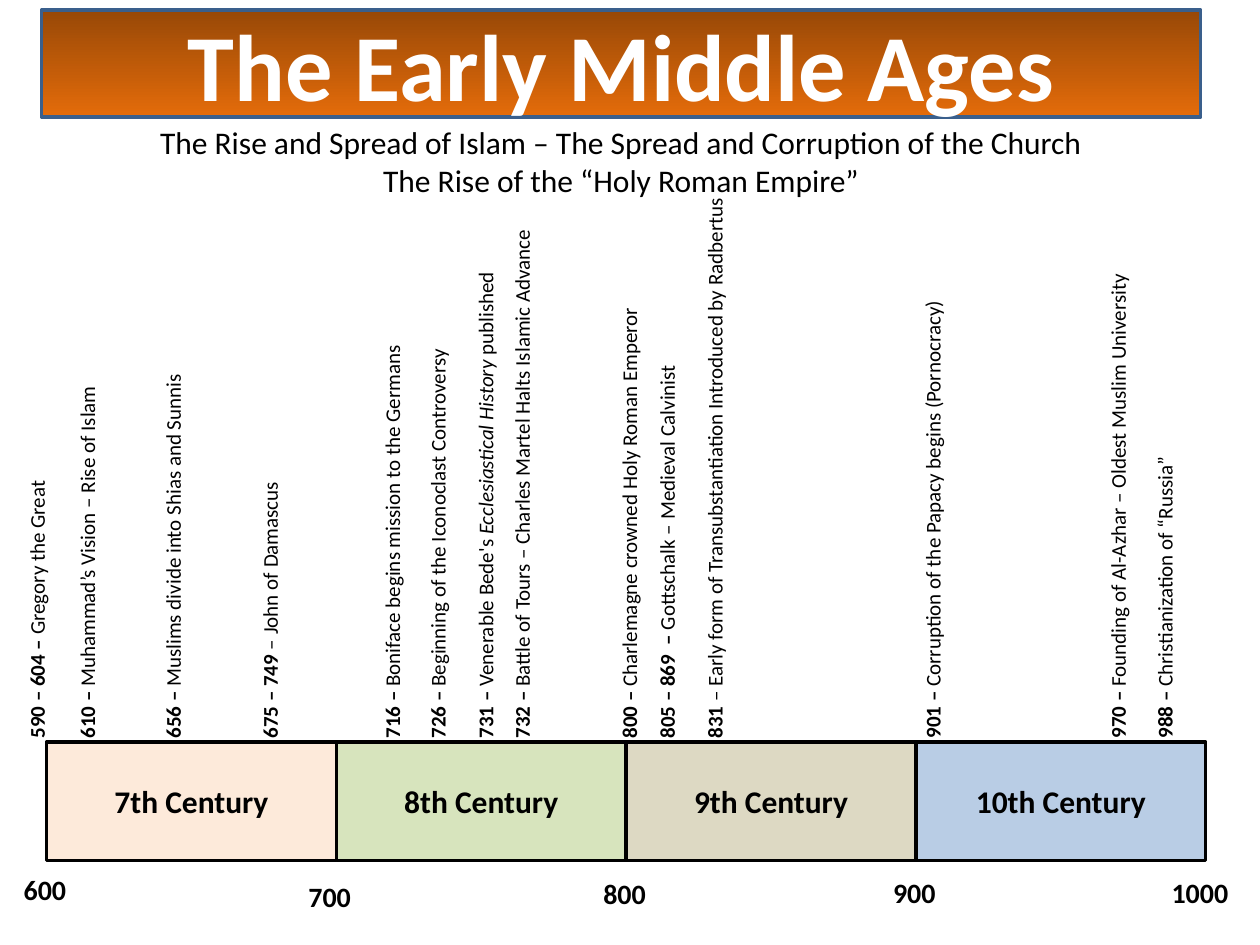
from pptx import Presentation
from pptx.dml.color import RGBColor
from pptx.enum.shapes import MSO_SHAPE
from pptx.enum.text import MSO_ANCHOR, MSO_AUTO_SIZE, PP_ALIGN
from pptx.util import Inches, Pt

RECTANGLE = MSO_SHAPE.RECTANGLE
MIDDLE, TOP = MSO_ANCHOR.MIDDLE, MSO_ANCHOR.TOP
GROW, FIXED = MSO_AUTO_SIZE.SHAPE_TO_FIT_TEXT, MSO_AUTO_SIZE.NONE
LEFT, CENTER = PP_ALIGN.LEFT, PP_ALIGN.CENTER

THEME = {
    "font": "Calibri",
    "text": "000000",
    "title_text": "FFFFFF",
    "title_gradient": ("984807", "E46C0A"),
    "title_line": "3A5F8C",
    "band_line": "000000",
    "line_width": 2,
    "title_size": 54,
    "heading_size": 18,
    "year_size": 16,
    "event_size": 12,
}

TITLE = "The Early Middle Ages"
SUBTITLE = (
    "The Rise and Spread of Islam – The Spread and Corruption of the Church",
    "The Rise of the “Holy Roman Empire”",
)
CENTURIES = (
    ("7th Century", "FDEADA"),
    ("8th Century", "D7E4BD"),
    ("9th Century", "DDD9C3"),
    ("10th Century", "B9CDE5"),
)
# year, left, top, width
YEARS = (
    ("600", 0.09, 6.88, 0.54),
    ("700", 2.35, 6.93, 0.54),
    ("800", 4.69, 6.91, 0.54),
    ("900", 6.99, 6.9, 0.54),
    ("1000", 9.2, 6.9, 0.65),
)
# centre on the timeline, length of the upright label, date, (text, italic) pieces
EVENTS = (
    (0.29, 2.44, "590 – 604 – ", [("Gregory the Great", False)]),
    (0.69, 3.08, "610 – ", [("Muhammad’s Vision – Rise of Islam", False)]),
    (1.37, 4.64, "656 – ", [("Muslims divide into Shias and Sunnis", False)]),
    (2.14, 2.29, "675 – 749", [(" – John of Damascus", False)]),
    (3.11, 3.41, "716 – ", [("Boniface begins mission to the Germans", False)]),
    (3.47, 3.31, "726 – ", [("Beginning of the Iconoclast Controversy", False)]),
    (3.85, 3.98, "731 – ", [("Venerable Bede's ", False),
                            ("Ecclesiastical History ", True),
                            ("published", False)]),
    (4.14, 4.27, "732 – ",
     [("Battle of Tours – Charles Martel Halts Islamic Advance", False)]),
    (4.99, 3.69, "800 – ", [("Charlemagne crowned Holy Roman Emperor", False)]),
    (5.29, 5.18, "805 – 869  – ", [("Gottschalk – Medieval Calvinist", False)]),
    (5.67, 4.51, "831 ",
     [("– Early form of Transubstantiation Introduced by Radbertus", False)]),
    (7.4, 3.77, "901 – ", [("Corruption of the Papacy begins (Pornocracy)", False)]),
    (8.87, 3.94, "970 – ", [("Founding of Al-Azhar – Oldest Muslim University", False)]),
    (9.24, 2.59, "988 – ", [("Christianization of “Russia”", False)]),
)

BAND_LEFT, BAND_TOP, BAND_WIDTH, BAND_HEIGHT = 0.37, 5.89, 2.3, 0.94
EVENT_BOTTOM, EVENT_THICKNESS, EVENT_INDENT = 5.96, 0.3, 0.43
HEADER_LEFT, HEADER_WIDTH = 0.33, 9.2


def rgb(color):
    return RGBColor.from_string(color)


def write(shape, paragraphs, size, color=THEME["text"], align=LEFT, **frame_format):
    """Fill a shape with paragraphs, each a list of (text, bold, italic) runs."""
    frame = shape.text_frame
    for name, value in frame_format.items():
        setattr(frame, name, value)
    for index, runs in enumerate(paragraphs):
        paragraph = frame.add_paragraph() if index else frame.paragraphs[0]
        paragraph.alignment = align
        for text, bold, italic in runs:
            run = paragraph.add_run()
            run.text = text
            run.font.color.rgb = rgb(color)
            values = {"name": THEME["font"], "size": Pt(size),
                      "bold": bold, "italic": italic}
            for name, value in values.items():
                setattr(run.font, name, value)


def outline(shape, color):
    shape.line.color.rgb = rgb(color)
    shape.line.width = Pt(THEME["line_width"])


def add_text(slide, left, top, width, height):
    return slide.shapes.add_textbox(*map(Inches, (left, top, width, height)))


def add_header(slide):
    title = slide.shapes.title
    place = {"left": HEADER_LEFT, "top": 0.08, "width": HEADER_WIDTH, "height": 0.85}
    for name, value in place.items():
        setattr(title, name, Inches(value))
    title.fill.gradient()
    title.fill.gradient_angle = 270
    for stop, color in zip(title.fill.gradient_stops, THEME["title_gradient"]):
        stop.color.rgb = rgb(color)
    outline(title, THEME["title_line"])
    write(title, [[(TITLE, True, False)]], THEME["title_size"], THEME["title_text"],
          CENTER, vertical_anchor=MIDDLE, word_wrap=True, auto_size=FIXED)

    subtitle = add_text(slide, HEADER_LEFT, 0.93, HEADER_WIDTH, 0.71)
    write(subtitle, [[(line, False, False)] for line in SUBTITLE],
          THEME["heading_size"], align=CENTER, word_wrap=True, auto_size=GROW)


def add_centuries(slide):
    for index, (century, color) in enumerate(CENTURIES):
        place = (BAND_LEFT + index * BAND_WIDTH, BAND_TOP, BAND_WIDTH, BAND_HEIGHT)
        band = slide.shapes.add_shape(RECTANGLE, *map(Inches, place))
        band.shadow.inherit = False
        band.fill.solid()
        band.fill.fore_color.rgb = rgb(color)
        outline(band, THEME["band_line"])
        write(band, [[(century, True, False)]], THEME["heading_size"],
              align=CENTER, vertical_anchor=MIDDLE, word_wrap=True)


def add_years(slide):
    for year, left, top, width in YEARS:
        label = add_text(slide, left, top, width, 0.37)
        write(label, [[(year, True, False)]], THEME["year_size"],
              word_wrap=False, auto_size=GROW)


def add_events(slide):
    """Stand each label upright, with its date resting on the timeline."""
    for center, length, date, pieces in EVENTS:
        middle = EVENT_BOTTOM - length / 2
        label = add_text(slide, center - length / 2, middle - EVENT_THICKNESS / 2,
                         length, EVENT_THICKNESS)
        label.rotation = 270
        runs = [(date, True, False)] + [(text, False, italic) for text, italic in pieces]
        write(label, [runs], THEME["event_size"],
              vertical_anchor=TOP, word_wrap=True, auto_size=GROW)
        properties = label.text_frame.paragraphs[0]._p.get_or_add_pPr()
        properties.set("marL", str(Inches(EVENT_INDENT)))
        properties.set("indent", str(-Inches(EVENT_INDENT)))


def main():
    presentation = Presentation()
    presentation.slide_width = Inches(10)
    presentation.slide_height = Inches(7.5)
    slide = presentation.slides.add_slide(
        presentation.slide_layouts.get_by_name("Title Only"))
    add_header(slide)
    add_centuries(slide)
    add_years(slide)
    add_events(slide)
    presentation.save("out.pptx")


if __name__ == "__main__":
    main()
